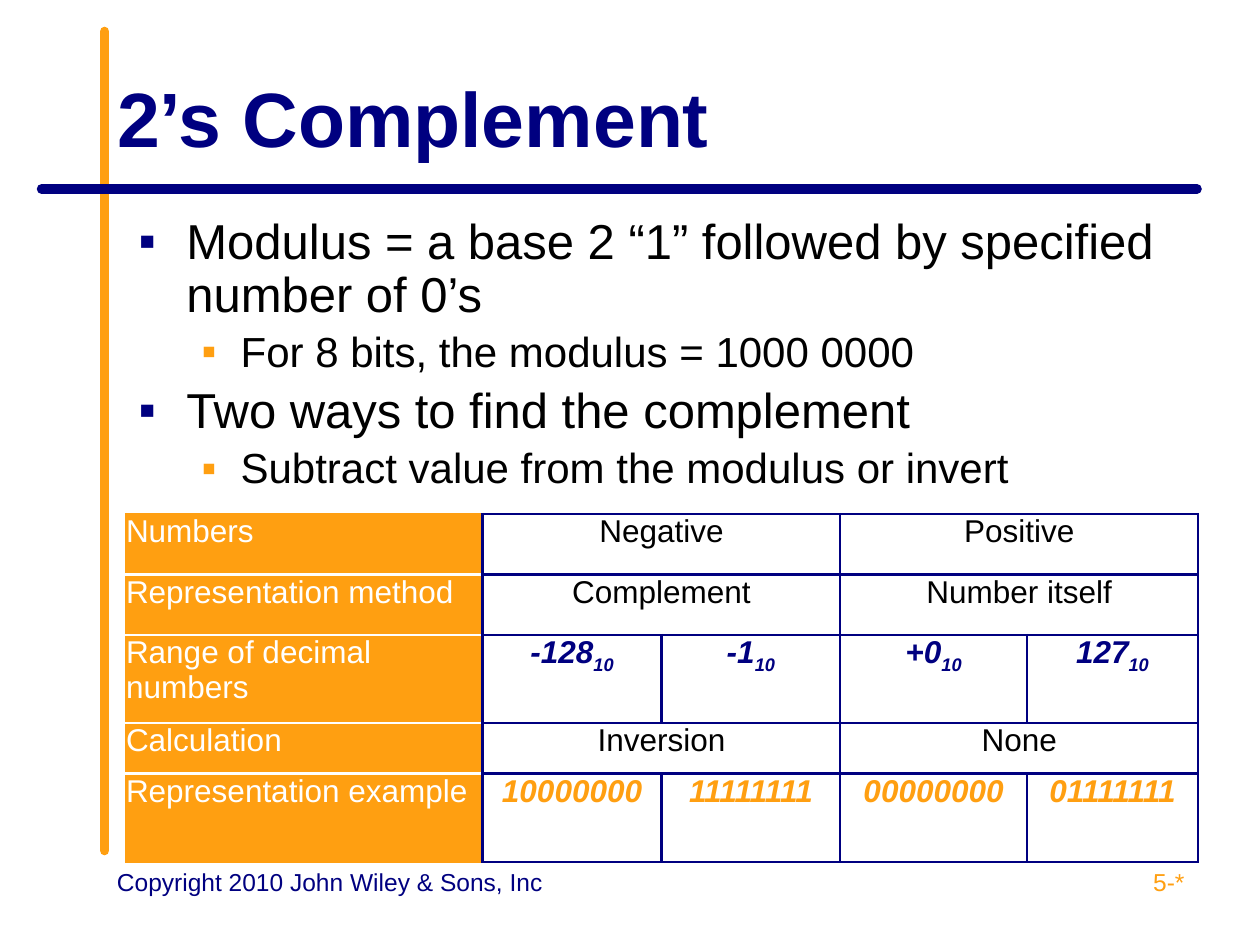
"""Build the 2's complement slide: title, bullet list and table of number ranges."""
from lxml.etree import SubElement
from pptx import Presentation
from pptx.dml.color import RGBColor
from pptx.enum.shapes import MSO_CONNECTOR
from pptx.enum.text import MSO_ANCHOR, MSO_AUTO_SIZE, PP_ALIGN
from pptx.oxml import parse_xml
from pptx.oxml.ns import nsdecls, qn
from pptx.util import Inches, Pt

NAVY, ORANGE, WHITE, BLACK = "000080", "FF9F11", "FFFFFF", "000000"


def rgb(value):
    return RGBColor.from_string(value)


def write(paragraph, text, size=18, color=BLACK, bold=False, italic=False, align=PP_ALIGN.LEFT, baseline=0):
    paragraph.alignment = align
    run = paragraph.add_run()
    run.text = text
    run.font.name = "Arial"
    run.font.size = Pt(size)
    run.font.bold = bold
    run.font.italic = italic
    run.font.color.rgb = rgb(color)
    if baseline:
        run.font._element.set("baseline", str(baseline * 1000))


prs = Presentation()
prs.slide_width, prs.slide_height = Inches(10), Inches(7.5)
slide = prs.slides.add_slide(prs.slide_layouts[1])

for x1, y1, x2, y2, color in [(0.83, 6.75, 0.83, 0.25, ORANGE), (9.5, 1.5, 0.33, 1.5, NAVY)]:
    rule = slide.shapes.add_connector(MSO_CONNECTOR.STRAIGHT, Inches(x1), Inches(y1), Inches(x2), Inches(y2))
    rule.line.color.rgb = rgb(color)
    rule.line.width = Pt(5.5)
    rule.line._ln.set("cap", "rnd")
    SubElement(rule._element.spPr, qn("a:effectLst"))

title = slide.shapes.title
title.left, title.top, title.width, title.height = Inches(0.83), Inches(0.3), Inches(8.67), Inches(1.25)
title.text_frame.vertical_anchor = MSO_ANCHOR.MIDDLE
title.text_frame.auto_size = MSO_AUTO_SIZE.NONE
write(title.text_frame.paragraphs[0], "2’s Complement", size=44, color=NAVY, bold=True)

body = slide.placeholders[1]
body.left, body.top, body.width, body.height = Inches(1), Inches(1.67), Inches(8.5), Inches(2.39)
body.text_frame.auto_size = MSO_AUTO_SIZE.NONE
bullets = [
    (0, "Modulus = a base 2 “1” followed by specified number of 0’s"),
    (1, "For 8 bits, the modulus = 1000 0000"),
    (0, "Two ways to find the complement"),
    (1, "Subtract value from the modulus or invert"),
]
level_formats = [(28, NAVY, 0.38, -0.38, 5.6), (24, ORANGE, 0.81, -0.31, 4.8)]
for index, (level, text) in enumerate(bullets):
    size, bullet_color, margin, indent, space = level_formats[level]
    item = body.text_frame.add_paragraph() if index else body.text_frame.paragraphs[0]
    item.level = level
    properties = item._p.get_or_add_pPr()
    properties.set("marL", str(Inches(margin)))
    properties.set("indent", str(Inches(indent)))
    SubElement(SubElement(properties, qn("a:buClr")), qn("a:srgbClr"), val=bullet_color)
    SubElement(properties, qn("a:buFont"), typeface="Arial")
    SubElement(properties, qn("a:buChar"), char="▪")
    item.line_spacing = 0.9
    item.space_before = Pt(space if index else 0)
    write(item, text, size=size)

rows = [
    ("Numbers", 0.48, ["Negative", "Positive"]),
    ("Representation method", 0.48, ["Complement", "Number itself"]),
    ("Range of decimal numbers", 0.7, ["-128", "-1", "+0", "127"]),
    ("Calculation", 0.4, ["Inversion", "None"]),
    ("Representation example", 0.7, ["10000000", "11111111", "00000000", "01111111"]),
]
column_widths = [2.83, 1.42, 1.42, 1.48, 1.36]
table = slide.shapes.add_table(
    len(rows), len(column_widths), Inches(1), Inches(4.08),
    Inches(sum(column_widths)), Inches(sum(height for _, height, _ in rows)),
).table
table.first_row = table.horz_banding = False
for column, width in zip(table.columns, column_widths):
    column.width = Inches(width)

last = len(rows) - 1
for r, (label, height, values) in enumerate(rows):
    table.rows[r].height = Inches(height)
    for c in range(len(column_widths)):
        cell = table.cell(r, c)
        cell.margin_left = cell.margin_right = cell.margin_top = cell.margin_bottom = 0
        borders = dict.fromkeys("LRTB", NAVY)
        if c == 0:
            cell.fill.solid()
            cell.fill.fore_color.rgb = rgb(ORANGE)
            borders.update(L=ORANGE, T=WHITE if r else ORANGE, B=WHITE if r < last else ORANGE)
        else:
            cell.fill.background()
        for position, (side, color) in enumerate(borders.items()):
            cell._tc.get_or_add_tcPr().insert(position, parse_xml(
                f'<a:ln{side} {nsdecls("a")} w="{Pt(1.5)}"><a:solidFill>'
                f'<a:srgbClr val="{color}"/></a:solidFill></a:ln{side}>'))
    write(table.cell(r, 0).text_frame.paragraphs[0], label, color=WHITE)
    span = 4 // len(values)
    for index, value in enumerate(values):
        first = 1 + index * span
        cell = table.cell(r, first)
        if span > 1:
            cell.merge(table.cell(r, first + span - 1))
        number = span == 1
        style = dict(color=BLACK, bold=number, italic=number, align=PP_ALIGN.CENTER)
        if number:
            style["color"] = ORANGE if r == last else NAVY
        entry = cell.text_frame.paragraphs[0]
        write(entry, value, **style)
        if number and r < last:
            write(entry, "10", baseline=-25, **style)

for left, width, text, color, align in [
    (7.17, 2.33, "5-*", ORANGE, PP_ALIGN.RIGHT),
    (0.83, 3.67, "Copyright 2010 John Wiley & Sons, Inc", NAVY, PP_ALIGN.LEFT),
]:
    footer = slide.shapes.add_textbox(Inches(left), Inches(6.83), Inches(width), Inches(0.52))
    footer.text_frame.word_wrap = True
    write(footer.text_frame.paragraphs[0], text, size=14, color=color, align=align)

prs.save("out.pptx")
